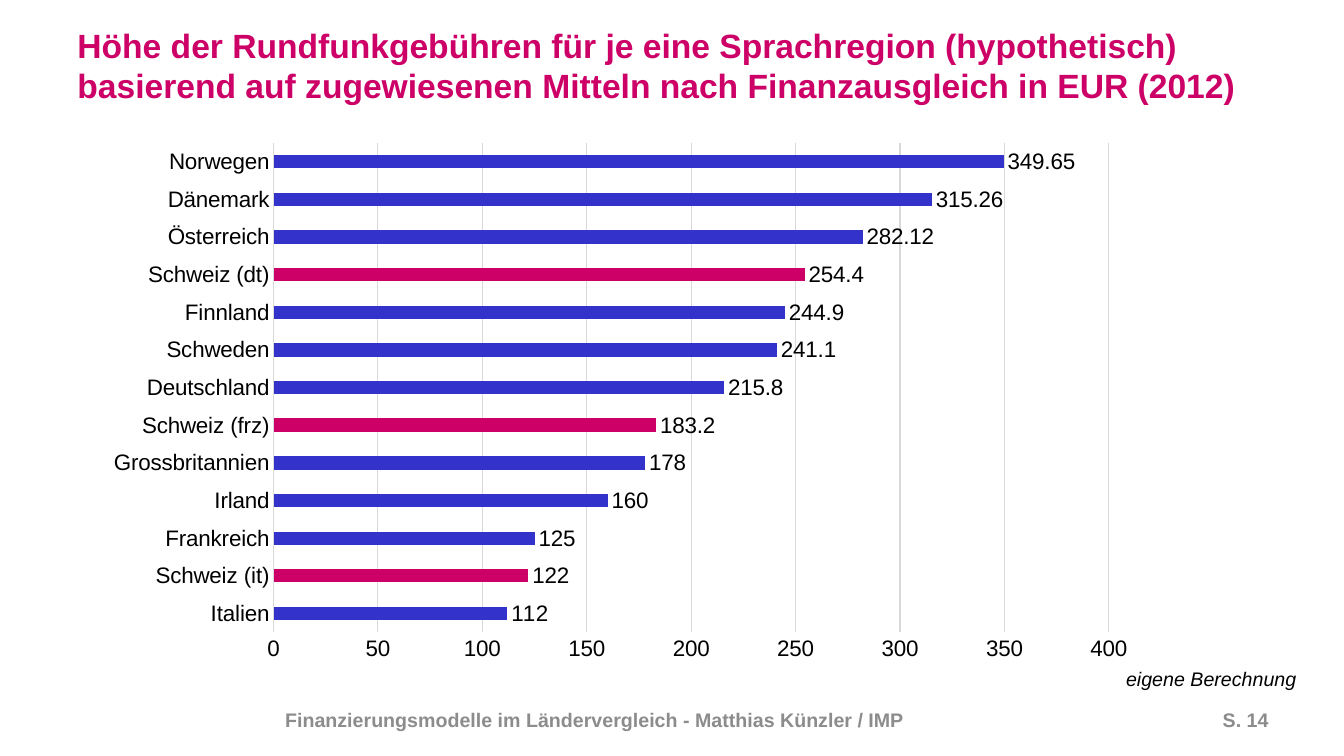
from pptx import Presentation
from pptx.chart.data import CategoryChartData
from pptx.dml.color import RGBColor
from pptx.enum.chart import XL_CHART_TYPE as ChartType
from pptx.enum.chart import XL_LABEL_POSITION as LabelPosition
from pptx.enum.chart import XL_TICK_MARK as TickMark
from pptx.enum.shapes import MSO_SHAPE as ShapeType
from pptx.enum.text import MSO_ANCHOR as Anchor
from pptx.enum.text import PP_ALIGN as Align
from pptx.util import Inches, Pt

PINK, BLUE, GREY, GRID = "CC0066", "3333CC", "8C8C8C", "D9D9D9"
BLACK, WHITE = "000000", "FFFFFF"

# Fees in EUR, from the lowest bar to the highest
FEES = {
    "Italien": 112,
    "Schweiz (it)": 122,
    "Frankreich": 125,
    "Irland": 160,
    "Grossbritannien": 178,
    "Schweiz (frz)": 183.2,
    "Deutschland": 215.8,
    "Schweden": 241.1,
    "Finnland": 244.9,
    "Schweiz (dt)": 254.4,
    "Österreich": 282.12,
    "Dänemark": 315.26,
    "Norwegen": 349.65,
}


def color(value):
    return RGBColor.from_string(value)


class SlideBuilder:
    font_name = "Arial"

    def __init__(self, slide):
        self.slide = slide

    def style_font(self, font, size, font_color, bold=False, italic=False):
        font.name = self.font_name
        font.size = Pt(size)
        font.color.rgb = color(font_color)
        font.bold = bold
        font.italic = italic

    def style_line(self, line):
        line.color.rgb = color(GRID)
        line.width = Pt(0.75)

    def fill_text(self, shape, text, size, font_color, align=Align.LEFT, **style):
        frame = shape.text_frame
        frame.word_wrap = True
        frame.vertical_anchor = Anchor.MIDDLE
        paragraph = frame.paragraphs[0]
        paragraph.alignment = align
        run = paragraph.add_run()
        run.text = text
        self.style_font(run.font, size, font_color, **style)

    def text(self, box, text, size, font_color, **style):
        shape = self.slide.shapes.add_textbox(*map(Inches, box))
        self.fill_text(shape, text, size, font_color, **style)

    def panel(self, box, fill, text, size, font_color, **style):
        shape = self.slide.shapes.add_shape(ShapeType.RECTANGLE, *map(Inches, box))
        shape.shadow.inherit = False
        shape.fill.solid()
        shape.fill.fore_color.rgb = color(fill)
        shape.line.fill.background()
        self.fill_text(shape, text, size, font_color, **style)

    def bar_chart(self, box, values, highlight):
        data = CategoryChartData()
        data.categories = list(values)
        data.add_series("Series 1", list(values.values()))
        chart = self.slide.shapes.add_chart(
            ChartType.BAR_CLUSTERED, *map(Inches, box), data).chart
        chart.has_title = False
        chart.has_legend = False
        self.style_font(chart.font, 16, BLACK)

        # Axes
        for axis in (chart.category_axis, chart.value_axis):
            axis.major_tick_mark = axis.minor_tick_mark = TickMark.NONE
            self.style_font(axis.tick_labels.font, 16, BLACK)
        self.style_line(chart.category_axis.format.line)
        value_axis = chart.value_axis
        value_axis.minimum_scale, value_axis.maximum_scale = 0, 400
        value_axis.major_unit = 50
        value_axis.format.line.fill.background()
        self.style_line(value_axis.major_gridlines.format.line)

        # Bars and value labels
        plot = chart.plots[0]
        plot.gap_width = 182
        plot.vary_by_categories = False
        series = plot.series[0]
        series.format.fill.solid()
        series.format.fill.fore_color.rgb = color(BLUE)
        for index, name in enumerate(values):
            if name.startswith(highlight):
                fill = series.points[index].format.fill
                fill.solid()
                fill.fore_color.rgb = color(PINK)
        labels = series.data_labels
        labels.show_value = True
        labels.position = LabelPosition.OUTSIDE_END
        self.style_font(labels.font, 16, BLACK)


def main():
    presentation = Presentation()
    presentation.slide_width = Inches(13.33)
    presentation.slide_height = Inches(7.5)
    slide = presentation.slides.add_slide(presentation.slide_layouts[6])
    builder = SlideBuilder(slide)

    # Title
    builder.text((0.67, 0.3, 12, 0.69),
                 "Höhe der Rundfunkgebühren für je eine Sprachregion (hypothetisch) "
                 "basierend auf zugewiesenen Mitteln nach Finanzausgleich in EUR (2012)",
                 24, PINK, bold=True)

    # Chart and its source note
    builder.bar_chart((0.92, 1.31, 10.47, 5.35), FEES, highlight="Schweiz")
    builder.panel((11.07, 6.54, 2.26, 0.39), WHITE, "eigene Berechnung",
                  14, BLACK, italic=True)

    # Footer
    builder.text((2.73, 6.9, 8.03, 0.47),
                 "Finanzierungsmodelle im Ländervergleich - Matthias Künzler / IMP",
                 14, GREY, bold=True)
    builder.text((11.39, 6.9, 1.29, 0.47), "S. 14", 14, GREY,
                 align=Align.RIGHT, bold=True)

    presentation.save("out.pptx")


if __name__ == "__main__":
    main()
